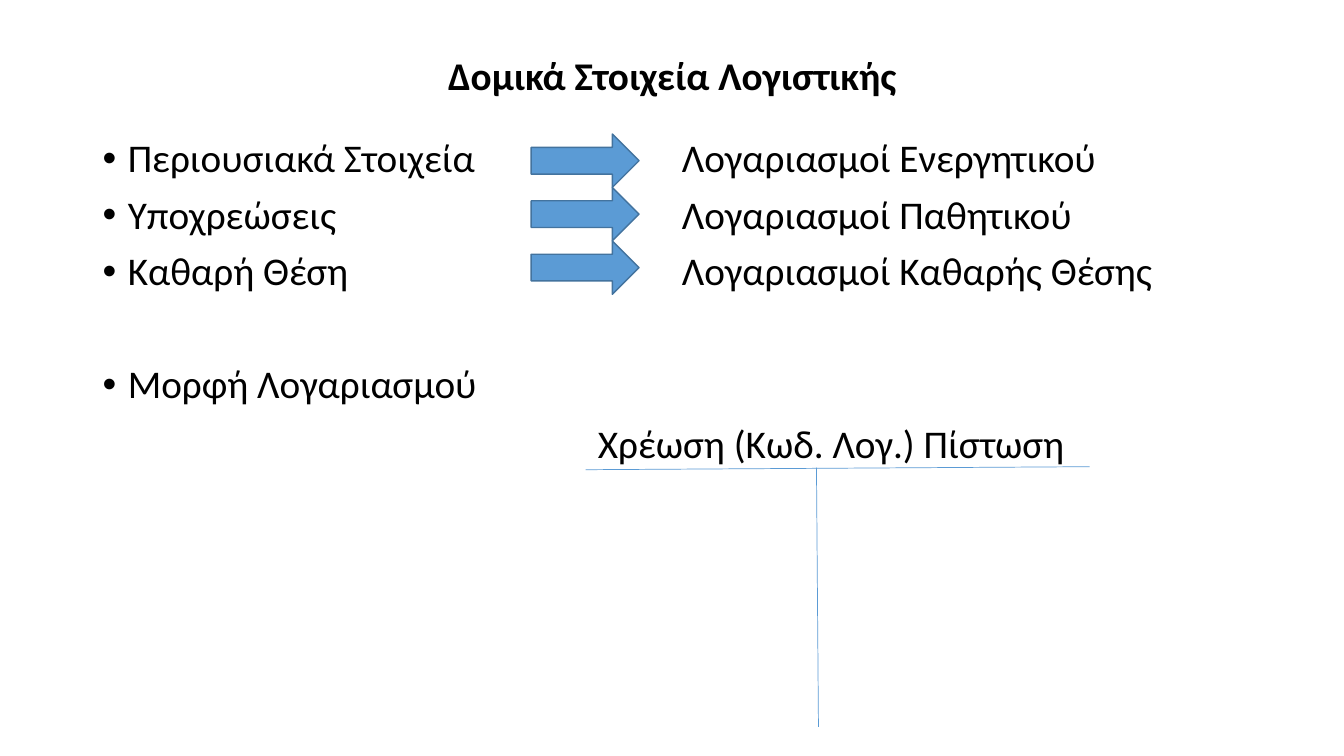
from lxml import etree
from pptx import Presentation
from pptx.dml.color import RGBColor
from pptx.enum.shapes import MSO_CONNECTOR, MSO_SHAPE
from pptx.enum.text import MSO_ANCHOR, PP_ALIGN
from pptx.oxml.ns import qn
from pptx.util import Pt

ARROW = MSO_SHAPE.RIGHT_ARROW
STRAIGHT = MSO_CONNECTOR.STRAIGHT
TOP, MIDDLE = MSO_ANCHOR.TOP, MSO_ANCHOR.MIDDLE
LEFT, CENTER = PP_ALIGN.LEFT, PP_ALIGN.CENTER

BLUE, DARK_BLUE, BLACK = "5B9BD5", "43739E", "000000"
BODY_LEFT, BODY_TOP = 66.24, 95.76
LINE_PITCH = 40.76  # one 28 pt line at 90 % plus 10 pt before it
GAP = 10


def rgb(value):
    """Turn a hex string into a colour."""
    return RGBColor.from_string(value)


def add_text(lines, x, y, w, h, bold=False, align=LEFT, anchor=TOP,
             bullet=False, gaps=None):
    """Add a text box with one paragraph per line."""
    tf = s.shapes.add_textbox(Pt(x), Pt(y), Pt(w), Pt(h)).text_frame
    tf.word_wrap = True
    tf.vertical_anchor = anchor
    for i, line in enumerate(lines):
        p = tf.paragraphs[0] if i == 0 else tf.add_paragraph()
        p.alignment = align
        p.line_spacing = 0.9
        p.space_before = Pt(gaps[i] if gaps else GAP if i else 0)
        if bullet:
            pPr = p._p.get_or_add_pPr()
            pPr.set("marL", str(Pt(18)))
            pPr.set("indent", str(Pt(-18)))
            etree.SubElement(pPr, qn("a:buFont")).set("typeface", "Arial")
            etree.SubElement(pPr, qn("a:buChar")).set("char", "•")
        r = p.add_run()
        r.text = line
        r.font.name = "Calibri"
        r.font.size = Pt(28)
        r.font.bold = bold
        r.font.color.rgb = rgb(BLACK)


prs = Presentation()
prs.slide_width, prs.slide_height = Pt(960), Pt(540)
s = prs.slides.add_slide(prs.slide_layouts[6])

# Title
add_text(["Δομικά Στοιχεία Λογιστικής"], BODY_LEFT, 28.8, 828, 53.28,
         bold=True, align=CENTER, anchor=MIDDLE)

# Elements on the left, their accounts on the right
add_text(["Περιουσιακά Στοιχεία", "Υποχρεώσεις", "Καθαρή Θέση",
          "Μορφή Λογαριασμού"],
         BODY_LEFT, BODY_TOP, 310, 210, bullet=True,
         gaps=[0, GAP, GAP, GAP + LINE_PITCH])
add_text(["Λογαριασμοί Ενεργητικού", "Λογαριασμοί Παθητικού",
          "Λογαριασμοί Καθαρής Θέσης"],
         480, BODY_TOP, 414, 125)

# Arrows between the two columns
for row in range(3):
    sp = s.shapes.add_shape(ARROW, Pt(379.44), Pt(BODY_TOP + row * 38.16),
                            Pt(77.04), Pt(38.16))
    sp.shadow.inherit = False
    sp.fill.solid()
    sp.fill.fore_color.rgb = rgb(BLUE)
    sp.line.color.rgb = rgb(DARK_BLUE)
    sp.line.width = Pt(1)

# T-account
add_text(["Χρέωση (Κωδ. Λογ.) Πίστωση"],
         420, BODY_TOP + 5 * LINE_PITCH, 400, 38)
for x1, y1, x2, y2 in [(583.2, 334.08, 584.64, 519.12),
                       (418.32, 335.52, 778.32, 333.36)]:
    line = s.shapes.add_connector(STRAIGHT, Pt(x1), Pt(y1), Pt(x2), Pt(y2))
    line.line.color.rgb = rgb(BLUE)
    line.line.width = Pt(0.5)
    etree.SubElement(line._element.spPr, qn("a:effectLst"))

prs.save("out.pptx")
